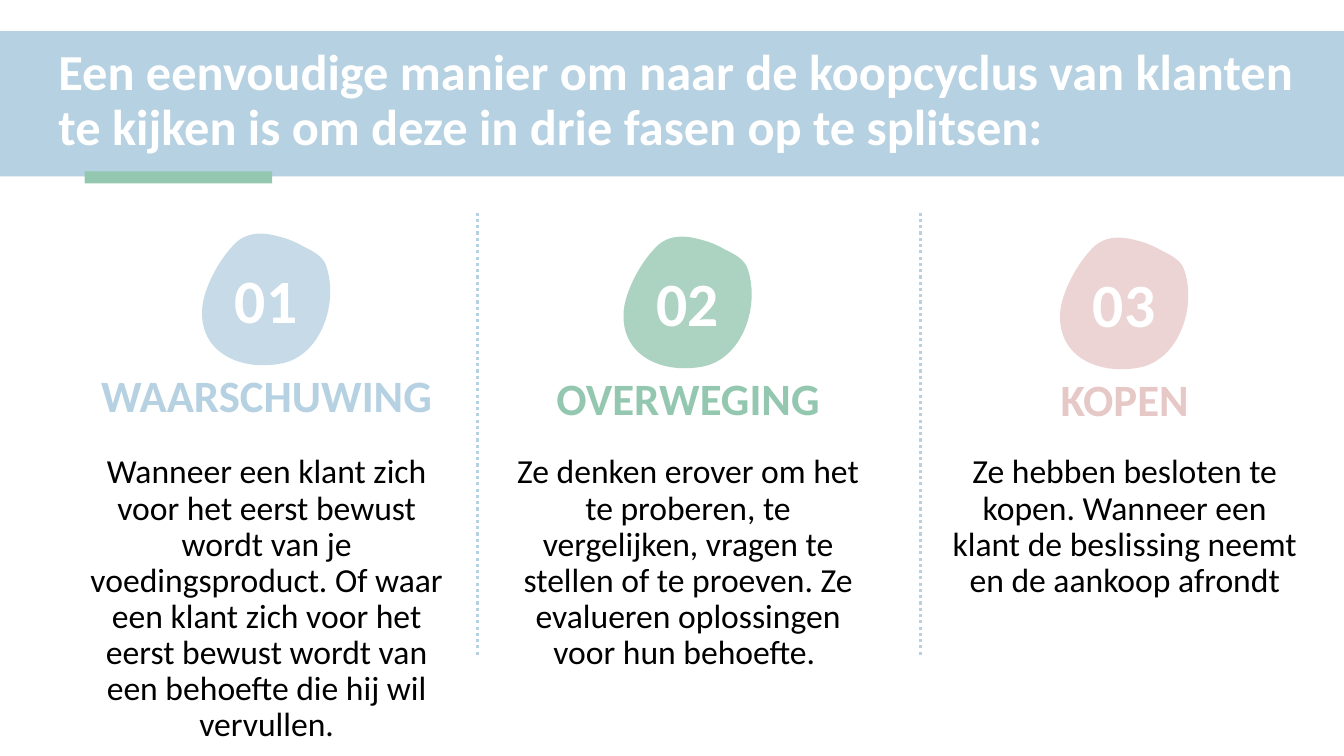
from lxml import etree
from pptx import Presentation
from pptx.dml.color import RGBColor
from pptx.enum.dml import MSO_LINE
from pptx.enum.shapes import MSO_CONNECTOR, MSO_SHAPE
from pptx.enum.text import MSO_ANCHOR, MSO_AUTO_SIZE, PP_ALIGN
from pptx.oxml.ns import qn
from pptx.util import Inches, Pt

RECT, STRAIGHT, DOTTED = MSO_SHAPE.RECTANGLE, MSO_CONNECTOR.STRAIGHT, MSO_LINE.ROUND_DOT
LEFT, CENTER = PP_ALIGN.LEFT, PP_ALIGN.CENTER
TOP, MIDDLE = MSO_ANCHOR.TOP, MSO_ANCHOR.MIDDLE
BLUE = RGBColor(0xB6, 0xD1, 0xE1)
GREEN = RGBColor(0x94, 0xC7, 0xB0)
PINK = RGBColor(0xE6, 0xC8, 0xC7)
WHITE = RGBColor(0xFF, 0xFF, 0xFF)
BLACK = RGBColor(0, 0, 0)
FONT = "Calibri"

# Content
TITLE = ("Een eenvoudige manier om naar de koopcyclus van klanten "
         "te kijken is om deze in drie fasen op te splitsen:")
# number, heading, description, colour, column left, blob top
PHASES = [
    ("01", "WAARSCHUWING",
     "Wanneer een klant zich voor het eerst bewust wordt van je voedingsproduct. "
     "Of waar een klant zich voor het eerst bewust wordt van een behoefte "
     "die hij wil vervullen.", BLUE, 0.78, 2.32),
    ("02", "OVERWEGING",
     "Ze denken erover om het te proberen, te vergelijken, vragen te stellen "
     "of te proeven. Ze evalueren oplossingen voor hun behoefte. ",
     GREEN, 4.96, 2.35),
    ("03", "KOPEN",
     "Ze hebben besloten te kopen. Wanneer een klant de beslissing neemt "
     "en de aankoop afrondt", PINK, 9.29, 2.36),
]
DIVIDERS = [4.74, 9.13]
COLUMN_W, DESCRIPTION_TOP = 3.73, 4.46
BLOB_DX, NUMBER_DY, HEADING_DY = 1.23, 0.64, 1.34

# Blob outline in hundredths of an inch: start, then cubic curves
BLOB_W, BLOB_H = 127, 131
BLOB_START = (77, 3)
BLOB_CURVES = [
    ((60, -2), (42, -3), (29, 13)),
    ((16, 27), (3, 51), (0, 70)),
    ((-6, 116), (35, 136), (76, 129)),
    ((116, 123), (135, 71), (123, 33)),
    ((120, 22), (109, 17), (99, 12)),
    ((92, 8), (85, 5), (77, 3)),
]


def paint(sp, color):
    sp.shadow.inherit = False
    sp.fill.solid()
    sp.fill.fore_color.rgb = color
    sp.line.fill.background()


def write(sp, text, size, color, bold=True, align=CENTER, anchor=TOP, spacing=0.9):
    tf = sp.text_frame
    tf.word_wrap = True
    tf.auto_size = MSO_AUTO_SIZE.NONE
    tf.vertical_anchor = anchor
    p = tf.paragraphs[0]
    p.alignment = align
    p.line_spacing = spacing
    r = p.add_run()
    r.text = text
    r.font.name, r.font.size, r.font.bold = FONT, Pt(size), bold
    r.font.color.rgb = color


def add_blob(shapes, x, y, color):
    builder = shapes.build_freeform(*BLOB_START, scale=Inches(0.01))
    builder.add_line_segments([curve[-1] for curve in BLOB_CURVES])
    sp = builder.convert_to_shape()
    sp.left, sp.top = Inches(x), Inches(y)
    sp.width, sp.height = Inches(BLOB_W / 100), Inches(BLOB_H / 100)
    paint(sp, color)
    rgb = sp.fill._xPr.find(qn("a:solidFill"))[0]
    etree.SubElement(rgb, qn("a:alpha")).set("val", "77000")

    # Round the outline: curves in place of straight segments
    outline = next(sp._element.iter(qn("a:path")))
    for child in list(outline):
        outline.remove(child)
    outline.set("w", str(BLOB_W))
    outline.set("h", str(BLOB_H))
    commands = [("a:moveTo", [BLOB_START])]
    commands += [("a:cubicBezTo", curve) for curve in BLOB_CURVES]
    for tag, points in commands + [("a:close", [])]:
        command = etree.SubElement(outline, qn(tag))
        for px, py in points:
            etree.SubElement(command, qn("a:pt"), x=str(px), y=str(py))


def box(shapes, x, y, w, h):
    return shapes.add_textbox(Inches(x), Inches(y), Inches(w), Inches(h))


prs = Presentation()
prs.slide_width, prs.slide_height = Inches(13.33), Inches(7.5)
s = prs.slides.add_slide(prs.slide_layouts[5])

# Title band with accent bar
for x, y, w, h, color in [(0, 0.31, 13.33, 1.44, BLUE), (0.84, 1.7, 1.86, 0.12, GREEN)]:
    paint(s.shapes.add_shape(RECT, Inches(x), Inches(y), Inches(w), Inches(h)), color)

# Title, brought in front of the band
title = s.shapes.title
title.left, title.top = Inches(0.48), Inches(0.29)
title.width, title.height = Inches(12.85), Inches(1.44)
write(title, TITLE, 36, WHITE, align=LEFT, anchor=MIDDLE)
s.shapes._spTree.append(title._element)

# Phase columns
for number, heading, description, color, x, y in PHASES:
    write(box(s.shapes, x, y + HEADING_DY, COLUMN_W, 1.14), heading, 32, color)
    write(box(s.shapes, x, DESCRIPTION_TOP, COLUMN_W, 2.65), description, 24, BLACK,
          bold=False, spacing=Pt(25.8))
    badge = s.shapes.add_group_shape().shapes
    add_blob(badge, x + BLOB_DX, y, color)
    write(box(badge, x + BLOB_DX, y + NUMBER_DY, 1.26, 1.05), number, 44, WHITE,
          spacing=Pt(23.4))

# Dotted dividers
for x in DIVIDERS:
    line = s.shapes.add_connector(STRAIGHT, Inches(x), Inches(2.11), Inches(x), Inches(6.5))
    line.line.color.rgb = BLUE
    line.line.width = Pt(2.25)
    line.line.dash_style = DOTTED
    etree.SubElement(line._element.spPr, qn("a:effectLst"))

prs.save("out.pptx")
